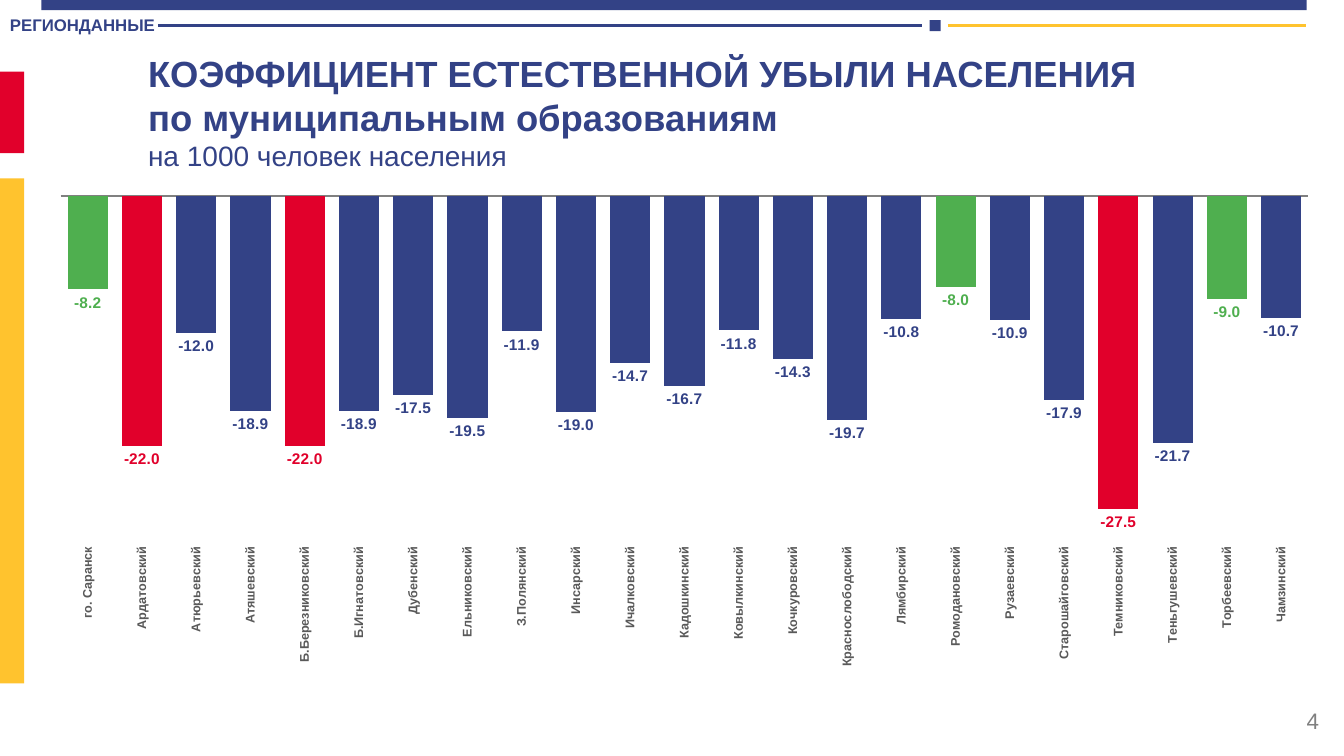
from lxml import etree
from pptx import Presentation
from pptx.chart.data import CategoryChartData
from pptx.dml.color import RGBColor
from pptx.enum.chart import XL_CHART_TYPE as ChartType, XL_LABEL_POSITION as LabelPosition
from pptx.enum.chart import XL_TICK_LABEL_POSITION as TickLabels, XL_TICK_MARK as TickMark
from pptx.enum.shapes import MSO_CONNECTOR as Connector, MSO_SHAPE as Shape
from pptx.enum.text import MSO_ANCHOR as Anchor, PP_ALIGN as Align
from pptx.oxml import parse_xml
from pptx.oxml.ns import nsdecls, qn
from pptx.util import Inches, Pt

BLUE, RED, YELLOW, GREEN, GRAY = "334286", "E1002B", "FFC32E", "4FAF4F", "808080"


def style_font(font, size, color, bold=False):
    font.name, font.size, font.bold = "Arial", Pt(size), bold
    font.color.rgb = RGBColor.from_string(color)


def add_text(left, top, width, height, lines, align=Align.LEFT, anchor=Anchor.TOP):
    box = slide.shapes.add_textbox(Inches(left), Inches(top), Inches(width), Inches(height))
    frame = box.text_frame
    frame.word_wrap = True
    frame.vertical_anchor = anchor
    frame.text = "\n".join(text for text, *_ in lines)
    for paragraph, (_, size, color, bold) in zip(frame.paragraphs, lines):
        paragraph.alignment = align
        style_font(paragraph.runs[0].font, size, color, bold)


presentation = Presentation()
presentation.slide_width, presentation.slide_height = Inches(13.33), Inches(7.5)
slide = presentation.slides.add_slide(presentation.slide_layouts[6])

# Top band, side bars and header square
for left, top, width, height, color in [
    (0.41, 0, 12.55, 0.1, BLUE),
    (0, 0.71, 0.24, 0.81, RED),
    (0, 1.77, 0.24, 5.01, YELLOW),
    (9.22, 0.2, 0.11, 0.11, BLUE),
]:
    shape = slide.shapes.add_shape(
        Shape.RECTANGLE, Inches(left), Inches(top), Inches(width), Inches(height))
    shape.shadow.inherit = False
    shape.fill.solid()
    shape.fill.fore_color.rgb = RGBColor.from_string(color)
    shape.line.fill.background()

# Header lines
for start, end, color in [(1.57, 9.14, BLUE), (9.4, 12.95, YELLOW)]:
    line = slide.shapes.add_connector(
        Connector.STRAIGHT, Inches(start), Inches(0.25), Inches(end), Inches(0.25))
    line.line.color.rgb = RGBColor.from_string(color)
    line.line.width = Pt(2)
    etree.SubElement(line._element.spPr, qn("a:effectLst"))

# Header name, title and page number
add_text(0, 0.1, 2.27, 0.3, [("РЕГИОНДАННЫЕ", 12, BLUE, True)])
add_text(1.37, 0.46, 11.7, 1.01, [
    ("КОЭФФИЦИЕНТ ЕСТЕСТВЕННОЙ УБЫЛИ НАСЕЛЕНИЯ", 26, BLUE, True),
    ("по муниципальным образованиям", 26, BLUE, True),
    ("на 1000 человек населения", 20, BLUE, False),
])
add_text(10.18, 6.95, 3, 0.4, [("4", 16, GRAY, False)], Align.RIGHT, Anchor.MIDDLE)

# Chart data
rates = {
    "го. Саранск": -8.2, "Ардатовский": -22, "Атюрьевский": -12, "Атяшевский": -18.9,
    "Б.Березниковский": -22, "Б.Игнатовский": -18.9, "Дубенский": -17.5,
    "Ельниковский": -19.5, "З.Полянский": -11.9, "Инсарский": -19, "Ичалковский": -14.7,
    "Кадошкинский": -16.7, "Ковылкинский": -11.8, "Кочкуровский": -14.3,
    "Краснослободский": -19.7, "Лямбирский": -10.8, "Ромодановский": -8,
    "Рузаевский": -10.9, "Старошайговский": -17.9, "Темниковский": -27.5,
    "Теньгушевский": -21.7, "Торбеевский": -9, "Чамзинский": -10.7,
}
chart_data = CategoryChartData(number_format="#,##0.0")
chart_data.categories = list(rates)
chart_data.add_series("Series 1", list(rates.values()))
chart = slide.shapes.add_chart(
    ChartType.COLUMN_CLUSTERED, Inches(0.41), Inches(1.52), Inches(12.77), Inches(5.29),
    chart_data).chart
chart.has_legend = chart.has_title = False
style_font(chart.font, 10, "000000")

# Axes
value_axis = chart.value_axis
value_axis.minimum_scale, value_axis.maximum_scale, value_axis.major_unit = -30, 0, 2
value_axis.has_major_gridlines = False
value_axis.visible = False
category_axis = chart.category_axis
category_axis.tick_label_position = TickLabels.LOW
category_axis.major_tick_mark = TickMark.NONE
category_axis.format.line.color.rgb = RGBColor.from_string(GRAY)
category_axis.format.line.width = Pt(1.25)
style_font(category_axis.tick_labels.font, 9, "595959", True)
label_body = category_axis._element.find(qn("c:txPr")).find(qn("a:bodyPr"))
label_body.set("rot", "-5400000")
label_body.set("vert", "horz")

# Columns and labels
plot = chart.plots[0]
plot.gap_width, plot.overlap, plot.vary_by_categories = 35, 100, False
series = plot.series[0]
series.invert_if_negative = False
series.format.fill.solid()
series.format.fill.fore_color.rgb = RGBColor.from_string(BLUE)
labels = series.data_labels
labels.show_value = True
labels.number_format, labels.number_format_is_linked = "#,##0.0", False
labels.position = LabelPosition.OUTSIDE_END
style_font(labels.font, 11, BLUE, True)

# Lowest losses in green, highest in red
for index, rate in enumerate(rates.values()):
    if -9 > rate > -22:
        continue
    color = GREEN if rate >= -9 else RED
    point = series.points[index]
    point.format.fill.solid()
    point.format.fill.fore_color.rgb = RGBColor.from_string(color)
    style_font(point.data_label.font, 11, color, True)
    point.data_label.position = LabelPosition.OUTSIDE_END

# Plot area position
plot_area = chart._chartSpace.chart.plotArea
for layout in plot_area.findall(qn("c:layout")):
    plot_area.remove(layout)
plot_area.insert(0, parse_xml(
    f'<c:layout {nsdecls("c")}><c:manualLayout><c:layoutTarget val="inner"/>'
    '<c:xMode val="edge"/><c:yMode val="edge"/><c:x val="0.015"/><c:y val="0.081"/>'
    '<c:w val="0.969"/><c:h val="0.639"/></c:manualLayout></c:layout>'))

presentation.save("out.pptx")
